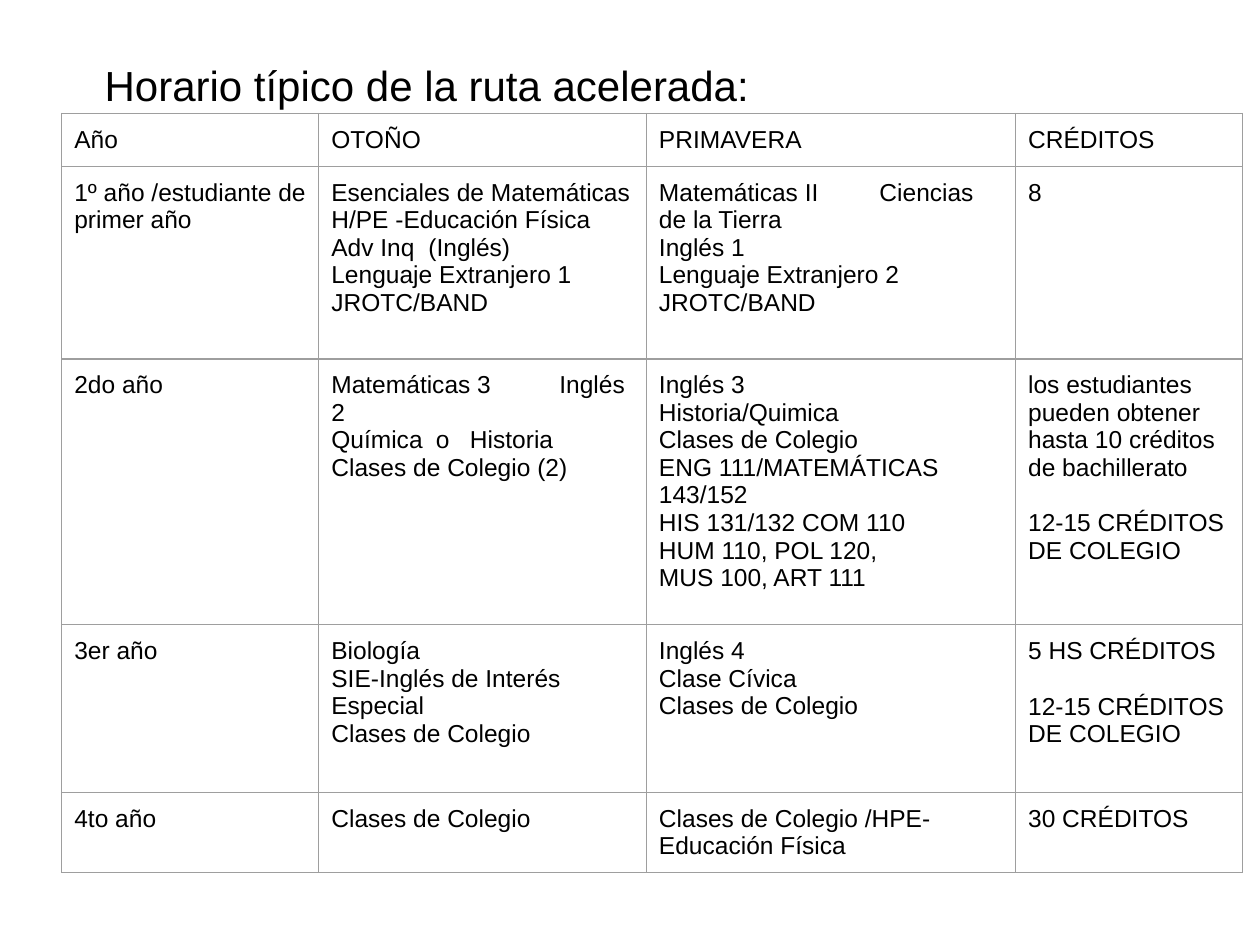
from lxml.etree import SubElement
from pptx import Presentation
from pptx.dml.color import RGBColor
from pptx.enum.text import MSO_ANCHOR, PP_ALIGN
from pptx.oxml.ns import qn
from pptx.util import Inches, Pt

TITLE = "Horario típico de la ruta acelerada:"
HEADERS = ["Año", "OTOÑO", "PRIMAVERA", "CRÉDITOS"]
YEARS = [
    (
        ["1º año /estudiante de primer año"],
        ["Esenciales de Matemáticas", "H/PE -Educación Física", "Adv Inq\t(Inglés)",
         "Lenguaje Extranjero 1", "JROTC/BAND"],
        ["Matemáticas II\tCiencias de la Tierra", "Inglés 1",
         "Lenguaje Extranjero 2", "JROTC/BAND"],
        ["8"],
    ),
    (
        ["2do año"],
        ["Matemáticas 3\tInglés 2", "Química\to\tHistoria", "Clases de Colegio (2)"],
        ["Inglés 3", "Historia/Quimica", "Clases de Colegio",
         "ENG 111/MATEMÁTICAS 143/152", "HIS 131/132 COM 110",
         "HUM 110, POL 120,", "MUS 100, ART 111"],
        ["los estudiantes pueden obtener hasta 10 créditos de bachillerato",
         "12-15 CRÉDITOS DE COLEGIO"],
    ),
    (
        ["3er año"],
        ["Biología", "SIE-Inglés de Interés Especial", "Clases de Colegio"],
        ["Inglés 4", "Clase Cívica", "Clases de Colegio"],
        ["5 HS CRÉDITOS", "12-15 CRÉDITOS DE COLEGIO"],
    ),
    (
        ["4to año"],
        ["Clases de Colegio"],
        ["Clases de Colegio /HPE-Educación Física"],
        ["30 CRÉDITOS"],
    ),
]
TAB_STOPS = {
    "Adv Inq": [0.77],
    "Matemáticas II": [1.75],
    "Matemáticas 3": [1.81],
    "Química": [0.83, 1.1],
}
COLUMN_WIDTHS = [2.04, 2.6, 2.93, 1.8]
ROW_HEIGHTS = [0.36, 1.53, 2.11, 1.33, 0.56]
CREDIT_GAP = Pt(16)
INSET = Inches(0.1)
BORDER = {"color": "9E9E9E", "width": Pt(0.75)}
MARGINS = {f"margin_{side}": INSET for side in ("left", "top", "right", "bottom")}


def color(value):
    """Turn a hex string into a colour."""
    return RGBColor.from_string(value)


def apply(target, values):
    """Set each named attribute on the target."""
    for name, value in values.items():
        setattr(target, name, value)


def write(paragraph, text, size):
    """Write one run of black Arial text."""
    run = paragraph.add_run()
    run.text = text
    apply(run.font, {"name": "Arial", "size": Pt(size), "bold": False})
    run.font.color.rgb = color("000000")


def add_tabs(paragraph, stops):
    """Add left tab stops, given in inches."""
    tab_list = SubElement(paragraph._p.get_or_add_pPr(), qn("a:tabLst"))
    for stop in stops:
        SubElement(tab_list, qn("a:tab"), pos=str(Inches(stop)), algn="l")


def add_borders(cell):
    """Draw a thin line on all four sides of a cell."""
    properties = cell._tc.get_or_add_tcPr()
    for side in ("lnL", "lnR", "lnT", "lnB"):
        line = SubElement(properties, qn(f"a:{side}"), w=str(BORDER["width"]))
        fill = SubElement(line, qn("a:solidFill"))
        SubElement(fill, qn("a:srgbClr"), val=BORDER["color"])


def fill_cell(cell, lines, gap):
    """Format a cell and write its lines as paragraphs."""
    apply(cell, {**MARGINS, "vertical_anchor": MSO_ANCHOR.TOP})
    add_borders(cell)
    cell.fill.background()
    for index, text in enumerate(lines):
        paragraph = cell.text_frame.add_paragraph() if index else cell.text_frame.paragraphs[0]
        if index and gap:
            paragraph.space_before = gap
        if "\t" in text:
            add_tabs(paragraph, TAB_STOPS[text.split("\t")[0]])
        write(paragraph, text, 14)


def add_title(slide):
    """Place the title placeholder and write the heading."""
    title = slide.shapes.title
    apply(title, {"left": Inches(0.73), "top": Inches(0.37),
                  "width": Inches(6.84), "height": Inches(0.73)})
    apply(title.text_frame, {**MARGINS, "word_wrap": True,
                             "vertical_anchor": MSO_ANCHOR.TOP})
    paragraph = title.text_frame.paragraphs[0]
    paragraph.alignment = PP_ALIGN.LEFT
    write(paragraph, TITLE, 24)


def add_schedule(slide):
    """Build the schedule table."""
    rows = [[[header] for header in HEADERS], *YEARS]
    table = slide.shapes.add_table(
        len(rows), len(HEADERS), Inches(0.49), Inches(0.9),
        Inches(sum(COLUMN_WIDTHS)), Inches(sum(ROW_HEIGHTS))).table
    apply(table, {"first_row": False, "horz_banding": False})
    for column, width in zip(table.columns, COLUMN_WIDTHS):
        column.width = Inches(width)
    for row, height, contents in zip(table.rows, ROW_HEIGHTS, rows):
        row.height = Inches(height)
        for header, cell, lines in zip(HEADERS, row.cells, contents):
            fill_cell(cell, lines, CREDIT_GAP if header == "CRÉDITOS" else None)


def main():
    """Build and save the presentation."""
    presentation = Presentation()
    apply(presentation, {"slide_width": Inches(10), "slide_height": Inches(7.5)})
    slide = presentation.slides.add_slide(presentation.slide_layouts[5])
    add_schedule(slide)
    add_title(slide)
    presentation.save("out.pptx")


if __name__ == "__main__":
    main()
